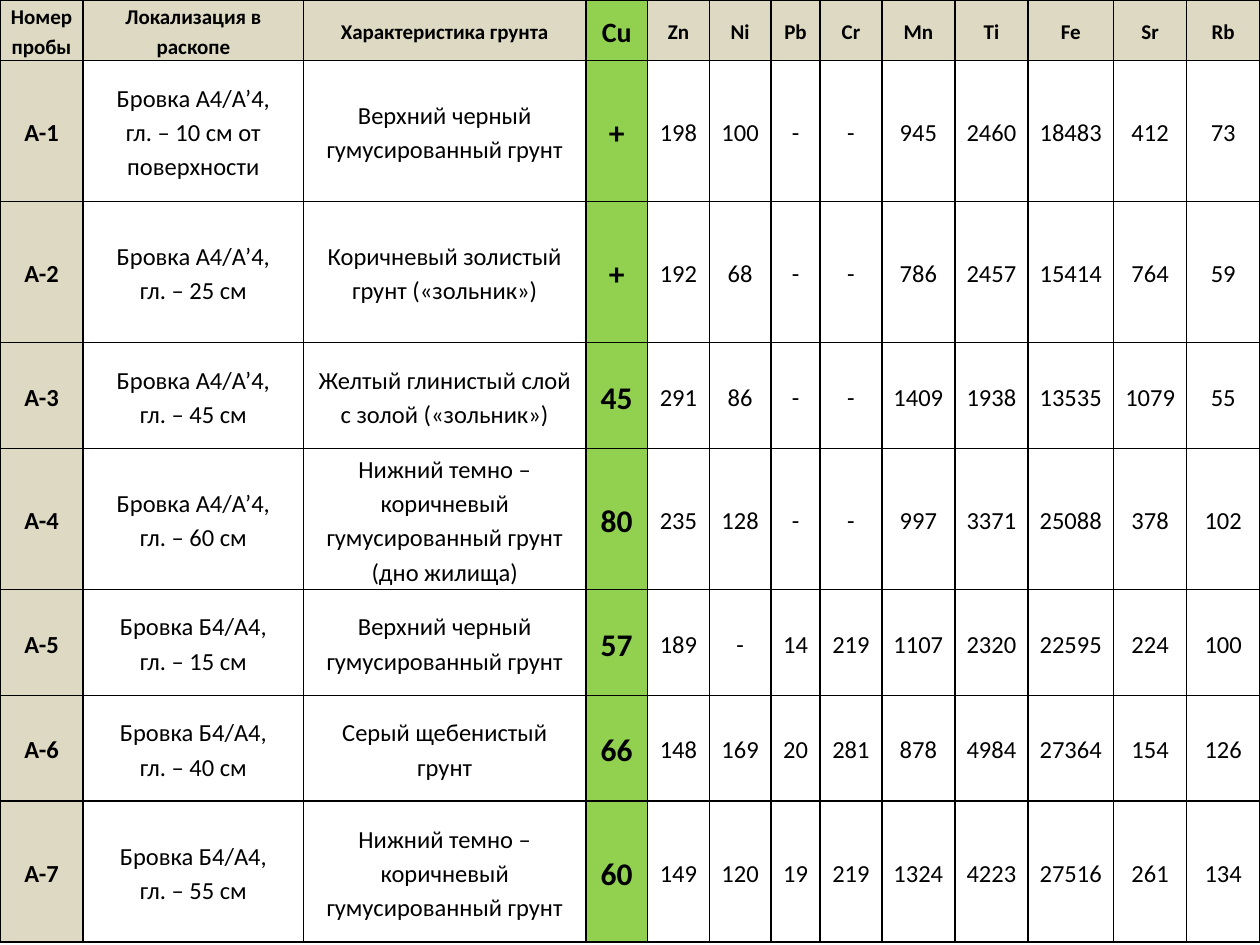
from lxml import etree
from pptx import Presentation
from pptx.dml.color import RGBColor
from pptx.enum.text import MSO_ANCHOR, PP_ALIGN
from pptx.oxml.ns import qn
from pptx.util import Inches, Pt

CENTER = PP_ALIGN.CENTER
MIDDLE = MSO_ANCHOR.MIDDLE

FONT = "Calibri"
BLACK, WHITE, BEIGE, GREEN = "000000", "FFFFFF", "DDD9C3", "92D050"
COLUMN_WIDTHS = [0.66, 1.75, 2.24, 0.49, 0.49, 0.49, 0.39,
                 0.49, 0.58, 0.58, 0.68, 0.58, 0.58]
HEADER_HEIGHT, SHORT, TALL = 0.48, 0.84, 1.12
ROW_HEIGHTS = [HEADER_HEIGHT, TALL, TALL, SHORT, TALL, SHORT, SHORT, TALL]
COPPER_COLUMN = 3

HEADERS = ["Номер пробы", "Локализация в раскопе", "Характеристика грунта",
           "Cu", "Zn", "Ni", "Pb", "Cr", "Mn", "Ti", "Fe", "Sr", "Rb"]

# Sample, location, soil, element readings
SAMPLES = [
    ("А-1", "Бровка А4/А’4,\nгл. – 10 см от поверхности",
     "Верхний черный гумусированный грунт",
     "+ 198 100 - - 945 2460 18483 412 73"),
    ("А-2", "Бровка А4/А’4,\nгл. – 25 см",
     "Коричневый золистый грунт («зольник»)",
     "+ 192 68 - - 786 2457 15414 764 59"),
    ("А-3", "Бровка А4/А’4,\nгл. – 45 см",
     "Желтый глинистый слой с золой («зольник»)",
     "45 291 86 - - 1409 1938 13535 1079 55"),
    ("А-4", "Бровка А4/А’4,\nгл. – 60 см",
     "Нижний темно – коричневый гумусированный грунт (дно жилища)",
     "80 235 128 - - 997 3371 25088 378 102"),
    ("А-5", "Бровка Б4/А4,\nгл. – 15 см",
     "Верхний черный гумусированный грунт",
     "57 189 - 14 219 1107 2320 22595 224 100"),
    ("А-6", "Бровка Б4/А4,\nгл. – 40 см",
     "Серый щебенистый грунт",
     "66 148 169 20 281 878 4984 27364 154 126"),
    ("А-7", "Бровка Б4/А4,\nгл. – 55 см",
     "Нижний темно – коричневый гумусированный грунт",
     "60 149 120 19 219 1324 4223 27516 261 134"),
]


def rgb(color):
    return RGBColor.from_string(color)


def add_borders(cell):
    properties = cell._tc.get_or_add_tcPr()
    for side in ("a:lnL", "a:lnR", "a:lnT", "a:lnB"):
        border = etree.SubElement(properties, qn(side), w=str(Pt(1)))
        line_fill = etree.SubElement(border, qn("a:solidFill"))
        etree.SubElement(line_fill, qn("a:srgbClr"), val=BLACK)


def fill_cell(cell, text, fill, size, bold):
    cell.margin_left = cell.margin_right = Inches(0.07)
    cell.margin_top = cell.margin_bottom = 0
    cell.vertical_anchor = MIDDLE
    add_borders(cell)
    cell.fill.solid()
    cell.fill.fore_color.rgb = rgb(fill)
    cell.text_frame.text = text
    for paragraph in cell.text_frame.paragraphs:
        paragraph.alignment = CENTER
        paragraph.line_spacing = 1.15
        for run in paragraph.runs:
            run.font.name = FONT
            run.font.size = Pt(size)
            run.font.bold = bold
            run.font.color.rgb = rgb(BLACK)


def cell_style(row, column):
    """Return fill, text size and weight for a table position."""
    is_header = row == 0
    if column == COPPER_COLUMN:
        return GREEN, 16 if is_header else 18, True
    if is_header:
        return BEIGE, 12, True
    if column == 0:
        return BEIGE, 14, True
    return WHITE, 14, False


def add_soil_table(slide):
    rows = [HEADERS] + [[sample, location, soil, *readings.split()]
                        for sample, location, soil, readings in SAMPLES]
    frame = slide.shapes.add_table(len(rows), len(HEADERS), 0, 0,
                                   Inches(10), Inches(sum(ROW_HEIGHTS)))
    table = frame.table
    table.first_row = table.horz_banding = False
    for column, width in zip(table.columns, COLUMN_WIDTHS):
        column.width = Inches(width)
    for row, height in zip(table.rows, ROW_HEIGHTS):
        row.height = Inches(height)
    for r, texts in enumerate(rows):
        for c, text in enumerate(texts):
            fill_cell(table.cell(r, c), text, *cell_style(r, c))


def main():
    presentation = Presentation()
    presentation.slide_width = Inches(10)
    presentation.slide_height = Inches(7.5)
    slide = presentation.slides.add_slide(presentation.slide_layouts[6])
    add_soil_table(slide)
    presentation.save("out.pptx")


if __name__ == "__main__":
    main()
